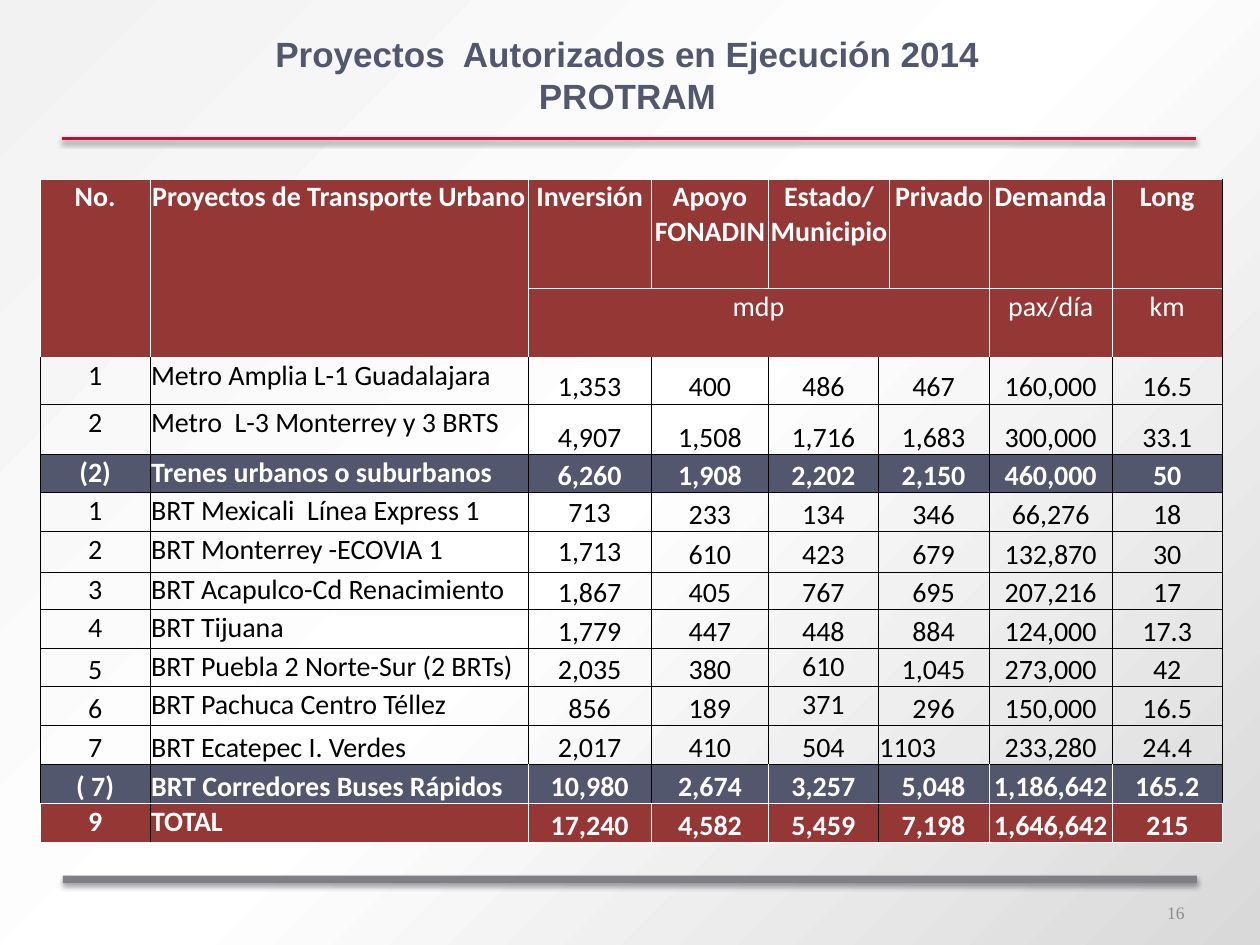
from dataclasses import dataclass

from lxml.etree import SubElement
from pptx import Presentation
from pptx.dml.color import RGBColor
from pptx.enum.shapes import MSO_CONNECTOR, MSO_SHAPE
from pptx.enum.text import MSO_ANCHOR, PP_ALIGN
from pptx.oxml.ns import qn
from pptx.util import Inches, Pt

WHITE = RGBColor(0xFF, 0xFF, 0xFF)
BLACK = RGBColor(0x00, 0x00, 0x00)
MAROON = RGBColor(0x95, 0x37, 0x35)
SLATE = RGBColor(0x53, 0x57, 0x6D)
TITLE_COLOR = RGBColor(0x52, 0x57, 0x6D)
CRIMSON = RGBColor(0xBE, 0x0F, 0x34)
GRAY = RGBColor(0x80, 0x7F, 0x83)
NUMBER_GRAY = RGBColor(0x8C, 0x8C, 0x8C)
BACKGROUND_STOPS = ((0, "D9D9D9"), (50, "FFFFFF"), (100, "F2F2F2"))

ANCHORS = {"t": MSO_ANCHOR.TOP, "m": MSO_ANCHOR.MIDDLE, "b": MSO_ANCHOR.BOTTOM}
COLUMN_WIDTHS = (0.87, 3, 0.98, 0.93, 0.87, 0.09, 0.79, 0.98, 0.87)
NAME_COLUMN = 1
WHITE_ROW_EDGES = {0, 1, 2, 13, 14}


@dataclass(frozen=True)
class RowStyle:
    color: RGBColor
    bold: bool
    fill: RGBColor | None
    white_edges: frozenset[int]
    columns: tuple[int, ...]


@dataclass(frozen=True)
class Row:
    style: RowStyle
    height: float
    anchors: str
    values: tuple[str, ...]


BODY_COLUMNS = (0, 1, 2, 3, 4, 5, 7, 8)
HEADER_EDGES = frozenset(range(9))
HEADER = RowStyle(WHITE, True, MAROON, HEADER_EDGES, (0, 1, 2, 3, 4, 6, 7, 8))
UNITS = RowStyle(WHITE, False, MAROON, HEADER_EDGES, (2, 7, 8))
PROJECT = RowStyle(BLACK, False, None, frozenset(), BODY_COLUMNS)
SUBTOTAL = RowStyle(WHITE, True, SLATE, frozenset(), BODY_COLUMNS)
LAST_SUBTOTAL = RowStyle(WHITE, True, SLATE, frozenset({2, 4, 7, 8}), BODY_COLUMNS)
TOTAL = RowStyle(WHITE, True, MAROON, frozenset({0, 2, 3, 4, 7, 8, 9}), BODY_COLUMNS)

ROWS = (
    Row(HEADER, 0.87, "tttttttt", ("No.", "Proyectos de Transporte Urbano", "Inversión", "Apoyo FONADIN",
                                   "Estado/ Municipio", "Privado", "Demanda", "Long")),
    Row(UNITS, 0.55, "ttt", ("mdp", "pax/día", "km")),
    Row(PROJECT, 0.37, "ttbbbbbb", ("1", "Metro Amplia L-1 Guadalajara", "1,353", "400", "486", "467", "160,000", "16.5")),
    Row(PROJECT, 0.4, "ttbbbbbb", ("2", "Metro  L-3 Monterrey y 3 BRTS", "4,907", "1,508", "1,716", "1,683", "300,000", "33.1")),
    Row(SUBTOTAL, 0.3, "ttbbbbbb", ("(2)", "Trenes urbanos o suburbanos", "6,260", "1,908", "2,202", "2,150", "460,000", "50")),
    Row(PROJECT, 0.31, "ttmbbbbb", ("1", "BRT Mexicali  Línea Express 1", "713", "233", "134", "346", "66,276", "18")),
    Row(PROJECT, 0.32, "ttmbbbbb", ("2", "BRT Monterrey -ECOVIA 1", "1,713", "610", "423", "679", "132,870", "30")),
    Row(PROJECT, 0.3, "ttbbbbbb", ("3", "BRT Acapulco-Cd Renacimiento", "1,867", "405", "767", "695", "207,216", "17")),
    Row(PROJECT, 0.31, "ttbbbbbb", ("4", "BRT Tijuana", "1,779", "447", "448", "884", "124,000", "17.3")),
    Row(PROJECT, 0.3, "btbbtbbb", ("5", "BRT Puebla 2 Norte-Sur (2 BRTs)", "2,035", "380", "610", "1,045", "273,000", "42")),
    Row(PROJECT, 0.31, "btbbtbbb", ("6", "BRT Pachuca Centro Téllez", "856", "189", "371", "296", "150,000", "16.5")),
    Row(PROJECT, 0.31, "bbbbbbbb", ("7", "BRT Ecatepec I. Verdes", "2,017", "410", "504", "1103", "233,280", "24.4")),
    Row(LAST_SUBTOTAL, 0.31, "bbbbbbbb", ("( 7)", "BRT Corredores Buses Rápidos", "10,980", "2,674", "3,257", "5,048", "1,186,642", "165.2")),
    Row(TOTAL, 0.31, "ttbbbbbb", ("9", "TOTAL", "17,240", "4,582", "5,459", "7,198", "1,646,642", "215")),
)


def set_background(slide) -> None:
    slide.background.fill.gradient()
    gradient = next(slide.element.iter(qn("a:gradFill")))
    for child in list(gradient):
        gradient.remove(child)
    stops = SubElement(gradient, qn("a:gsLst"))
    for position, color in BACKGROUND_STOPS:
        stop = SubElement(stops, qn("a:gs"), pos=str(position * 1000))
        SubElement(stop, qn("a:srgbClr"), val=color)
    shade = SubElement(gradient, qn("a:path"), path="circle")
    SubElement(shade, qn("a:fillToRect"), l="100000", t="100000")


def add_shadow(shape, distance: float, opacity: int) -> None:
    effects = SubElement(shape.element.spPr, qn("a:effectLst"))
    shadow = SubElement(effects, qn("a:outerShdw"), blurRad=str(Pt(3.1)), dist=str(Pt(distance)),
                        dir="5400000", rotWithShape="0")
    color = SubElement(shadow, qn("a:srgbClr"), val=str(BLACK))
    SubElement(color, qn("a:alpha"), val=str(opacity * 1000))


def format_text(para, font: str, size: float, color: RGBColor, bold: bool) -> None:
    for span in para.runs:
        span.font.name = font
        span.font.size = Pt(size)
        span.font.color.rgb = color
        span.font.bold = bold


def add_rules(slide) -> None:
    top_rule = slide.shapes.add_connector(MSO_CONNECTOR.STRAIGHT, Inches(0.49), Inches(1.1), Inches(9.49), Inches(1.1))
    top_rule.line.color.rgb = CRIMSON
    top_rule.line.width = Pt(2)
    add_shadow(top_rule, 1.6, 38)
    bottom_rule = slide.shapes.add_shape(MSO_SHAPE.RECTANGLE, Inches(0.5), Inches(6.95), Inches(9), Inches(0.06))
    bottom_rule.fill.solid()
    bottom_rule.fill.fore_color.rgb = GRAY
    bottom_rule.line.fill.background()
    add_shadow(bottom_rule, 1.8, 35)


def add_title(slide) -> None:
    title = slide.shapes.title
    title.left, title.top, title.width, title.height = Inches(1.83), Inches(0.21), Inches(6.3), Inches(0.77)
    title.text_frame.text = "Proyectos  Autorizados en Ejecución 2014\vPROTRAM"
    title.text_frame.vertical_anchor = MSO_ANCHOR.MIDDLE
    para = title.text_frame.paragraphs[0]
    para.alignment = PP_ALIGN.CENTER
    format_text(para, "Arial", 20, TITLE_COLOR, True)


def add_page_number(slide) -> None:
    box = slide.shapes.add_textbox(Inches(7.17), Inches(7.04), Inches(2.33), Inches(0.4))
    box.text_frame.word_wrap = True
    box.text_frame.vertical_anchor = MSO_ANCHOR.MIDDLE
    box.text_frame.text = "16"
    para = box.text_frame.paragraphs[0]
    para.alignment = PP_ALIGN.RIGHT
    format_text(para, "Times New Roman", 10, NUMBER_GRAY, False)


def add_borders(cell, row: int, column: int, white_edges: frozenset[int]) -> None:
    properties = cell._tc.get_or_add_tcPr()
    edges = {
        "a:lnL": column in white_edges,
        "a:lnR": column + cell.span_width in white_edges,
        "a:lnT": row in WHITE_ROW_EDGES,
        "a:lnB": row + cell.span_height in WHITE_ROW_EDGES,
    }
    for tag, is_white in edges.items():
        line = SubElement(properties, qn(tag), w=str(Pt(0.5)))
        fill = SubElement(line, qn("a:solidFill"))
        SubElement(fill, qn("a:srgbClr"), val=str(WHITE if is_white else BLACK))


def format_cell(cell, text: str, anchor: str, style: RowStyle, is_left: bool) -> None:
    if style.fill is None:
        cell.fill.background()
    else:
        cell.fill.solid()
        cell.fill.fore_color.rgb = style.fill
    cell.vertical_anchor = ANCHORS[anchor]
    cell.text_frame.text = text
    para = cell.text_frame.paragraphs[0]
    para.alignment = PP_ALIGN.LEFT if is_left else PP_ALIGN.CENTER
    format_text(para, "Calibri", 16, style.color, style.bold)


def merge_cells(table) -> None:
    for column in (0, 1):
        table.cell(0, column).merge(table.cell(1, column))
    table.cell(0, 4).merge(table.cell(0, 5))
    table.cell(1, 2).merge(table.cell(1, 6))
    for row in range(2, len(ROWS)):
        table.cell(row, 5).merge(table.cell(row, 6))


def add_projects_table(slide) -> None:
    frame = slide.shapes.add_table(len(ROWS), len(COLUMN_WIDTHS), Inches(0.32), Inches(1.42),
                                   Inches(sum(COLUMN_WIDTHS)), Inches(sum(row.height for row in ROWS)))
    table = frame.table
    table.first_row = table.horz_banding = False
    for column, width in zip(table.columns, COLUMN_WIDTHS):
        column.width = Inches(width)
    for cell in table.iter_cells():
        cell.margin_left = cell.margin_right = cell.margin_top = Inches(0.01)
        cell.margin_bottom = 0
    merge_cells(table)
    for index, row in enumerate(ROWS):
        table.rows[index].height = Inches(row.height)
        for column, anchor, text in zip(row.style.columns, row.anchors, row.values):
            cell = table.cell(index, column)
            is_left = (column == NAME_COLUMN and index > 0) or text == "1103"
            add_borders(cell, index, column, row.style.white_edges)
            format_cell(cell, text, anchor, row.style, is_left)


def main() -> None:
    deck = Presentation()
    deck.slide_width, deck.slide_height = Inches(10), Inches(7.5)
    slide = deck.slides.add_slide(deck.slide_layouts[5])
    set_background(slide)
    add_rules(slide)
    add_title(slide)
    add_page_number(slide)
    add_projects_table(slide)
    deck.save("out.pptx")


if __name__ == "__main__":
    main()
